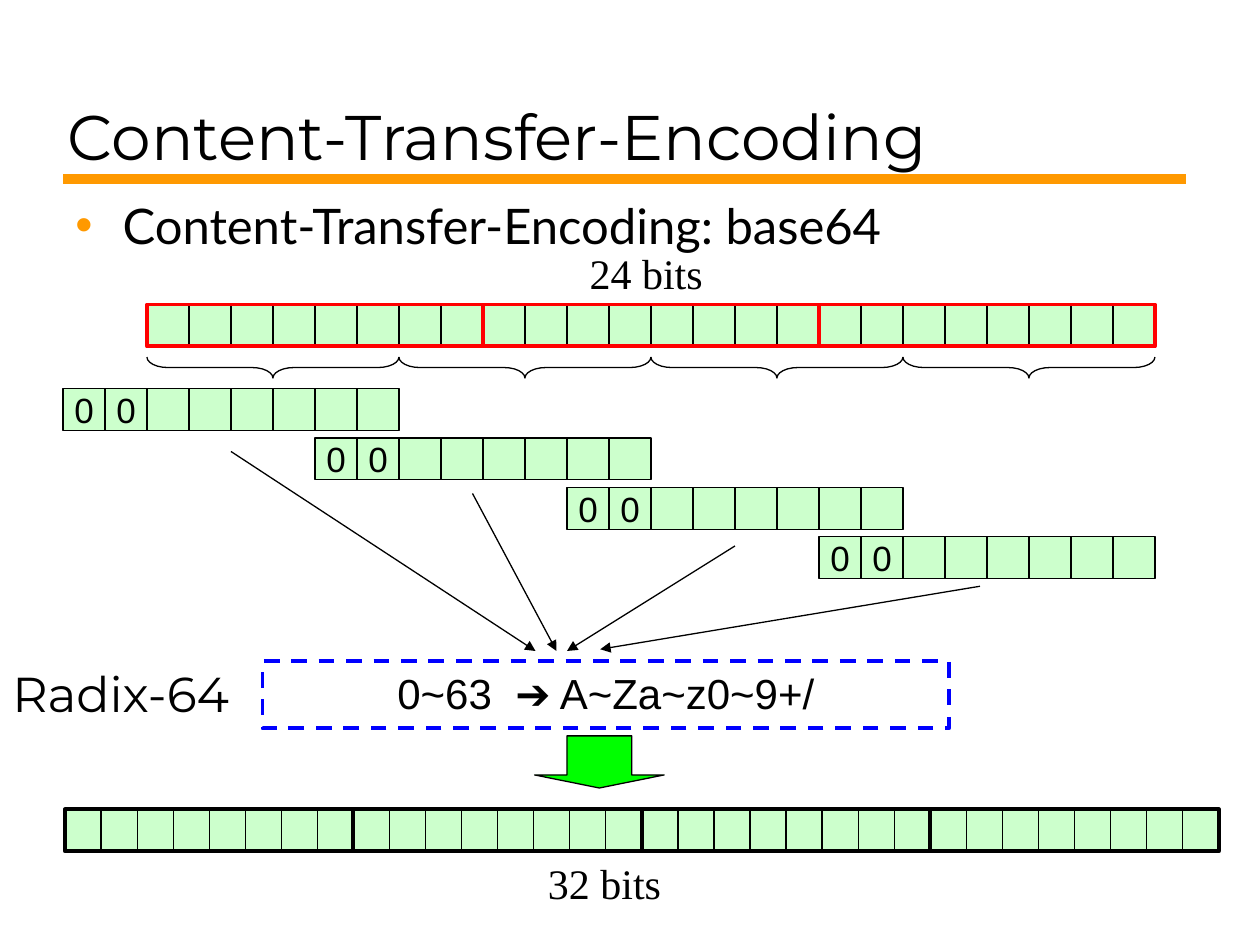
"""Build the Content-Transfer-Encoding slide, showing 24 bits encoded as 32 bits by base64."""
from lxml import etree
from pptx import Presentation
from pptx.dml.color import RGBColor
from pptx.enum.dml import MSO_LINE
from pptx.enum.shapes import MSO_CONNECTOR, MSO_SHAPE
from pptx.enum.text import MSO_ANCHOR, PP_ALIGN
from pptx.oxml.ns import qn
from pptx.util import Pt

RECT, BRACE, DOWN = MSO_SHAPE.RECTANGLE, MSO_SHAPE.LEFT_BRACE, MSO_SHAPE.DOWN_ARROW
STRAIGHT, DASH = MSO_CONNECTOR.STRAIGHT, MSO_LINE.DASH
TOP, MIDDLE, BOTTOM = MSO_ANCHOR.TOP, MSO_ANCHOR.MIDDLE, MSO_ANCHOR.BOTTOM
LEFT, CENTER = PP_ALIGN.LEFT, PP_ALIGN.CENTER
BLACK, RED, BLUE = RGBColor(0, 0, 0), RGBColor(255, 0, 0), RGBColor(0, 0, 255)
ORANGE, MINT, GREEN = RGBColor(255, 153, 0), RGBColor(204, 255, 204), RGBColor(0, 255, 0)

TITLE = "Content-Transfer-Encoding"
BULLET = "Content-Transfer-Encoding: base64"
MAPPING = "0~63  \u2794 A~Za~z0~9+/"
LABELS = [
    ("Radix-64", 0, 375.8, 147.6, 41, 28, "Montserrat"),
    ("24 bits", 329.8, 138.2, 79.2, 36, 24, "Times New Roman"),
    ("32 bits", 306, 486.7, 79.2, 36, 24, "Times New Roman"),
]
ARROWS = [
    (132, 258, 306, 372),
    (270, 282, 318, 372),
    (420, 312, 324, 372),
    (560, 335, 343, 371),
]
BYTE, SEXTET = 8, 6
CELL = 24
INPUT_X, INPUT_Y = 84, 174
PADDED_X, PADDED_Y, PADDED_STEP = 36, 222, 28.2
BRACE_Y, BRACE_W = 210, 12
OUTPUT_X, OUTPUT_Y, OUTPUT_CELL = 37.2, 462.5, 20.6

prs = Presentation()
prs.slide_width, prs.slide_height = Pt(720), Pt(540)
s = prs.slides.add_slide(prs.slide_layouts[6])


def write(sp, text, size, font, align=LEFT, anchor=TOP, wrap=True):
    tf = sp.text_frame
    tf.word_wrap, tf.vertical_anchor = wrap, anchor
    p = tf.paragraphs[0]
    p.text, p.alignment = text, align
    r = p.runs[0]
    r.font.size, r.font.name, r.font.color.rgb = Pt(size), font, BLACK
    return p


def textbox(text, x, y, w, h, size, font, **options):
    sp = s.shapes.add_textbox(Pt(x), Pt(y), Pt(w), Pt(h))
    return write(sp, text, size, font, **options)


def shape(shapes, kind, x, y, w, h, line=BLACK, width=0.75, fill=None):
    sp = shapes.add_shape(kind, Pt(x), Pt(y), Pt(w), Pt(h))
    sp.shadow.inherit = False
    if fill is None:
        sp.fill.background()
    else:
        sp.fill.solid()
        sp.fill.fore_color.rgb = fill
    sp.line.color.rgb, sp.line.width = line, Pt(width)
    return sp


def byte_cells(x, y, cell, bits=""):
    shapes = s.shapes.add_group_shape().shapes
    for i in range(BYTE):
        sp = shape(shapes, RECT, x + i * cell, y, cell, CELL, fill=MINT)
        if i < len(bits):
            write(sp, bits[i], 20, "Arial", CENTER, MIDDLE, wrap=False)


def connector(x1, y1, x2, y2, color, width):
    line = s.shapes.add_connector(STRAIGHT, Pt(x1), Pt(y1), Pt(x2), Pt(y2))
    line.line.color.rgb, line.line.width = color, Pt(width)
    etree.SubElement(line._element.spPr, qn("a:effectLst"))
    return line


connector(36, 102.2, 678, 102.2, ORANGE, 6)
textbox(TITLE, 31.7, 12.2, 645.8, 90, 36, "Montserrat", anchor=BOTTOM)

p = textbox(BULLET, 36, 108, 643.7, 368.6, 28, "Lato")
p.space_before = Pt(5.6)
pPr = p._p.get_or_add_pPr()
pPr.set("marL", str(Pt(27)))
pPr.set("indent", str(-Pt(27)))
color = etree.SubElement(pPr, qn("a:buClr"))
etree.SubElement(color, qn("a:srgbClr"), val=str(ORANGE))
etree.SubElement(pPr, qn("a:buFont"), typeface="Arial")
etree.SubElement(pPr, qn("a:buChar"), char="\u2022")

input_xs = [INPUT_X + i * BYTE * CELL for i in range(3)]
for x in input_xs:
    byte_cells(x, INPUT_Y, CELL)
for x in input_xs:
    shape(s.shapes, RECT, x, INPUT_Y, BYTE * CELL, CELL, RED, 2.25)

span = SEXTET * CELL
for i in range(4):
    byte_cells(PADDED_X + i * span, PADDED_Y + i * PADDED_STEP, CELL, "00")
    center = INPUT_X + (i + 0.5) * span
    brace = shape(s.shapes, BRACE, center - BRACE_W / 2, BRACE_Y - span / 2, BRACE_W, span)
    brace.rotation = 270
    brace.adjustments[0], brace.adjustments[1] = 1, 0.5

output_w = BYTE * OUTPUT_CELL
output_xs = [OUTPUT_X + i * output_w for i in range(4)]
for x in output_xs:
    byte_cells(x, OUTPUT_Y, OUTPUT_CELL)
for x in output_xs:
    shape(s.shapes, RECT, x, OUTPUT_Y, output_w, CELL, width=2.25)

mapping = shape(s.shapes, RECT, 150, 378, 392.4, 38.2, BLUE, 2.25)
mapping.line.dash_style = DASH
write(mapping, MAPPING, 24, "Arial", CENTER)

for ends in ARROWS:
    ln = connector(*ends, BLACK, 0.75).line._get_or_add_ln()
    etree.SubElement(ln, qn("a:tailEnd"), type="triangle")

down = shape(s.shapes, DOWN, 305.5, 420.5, 74, 29.8, fill=GREEN)
down.adjustments[0], down.adjustments[1] = 0.5, 0.25

for label in LABELS:
    textbox(*label, wrap=False)

prs.save("out.pptx")
